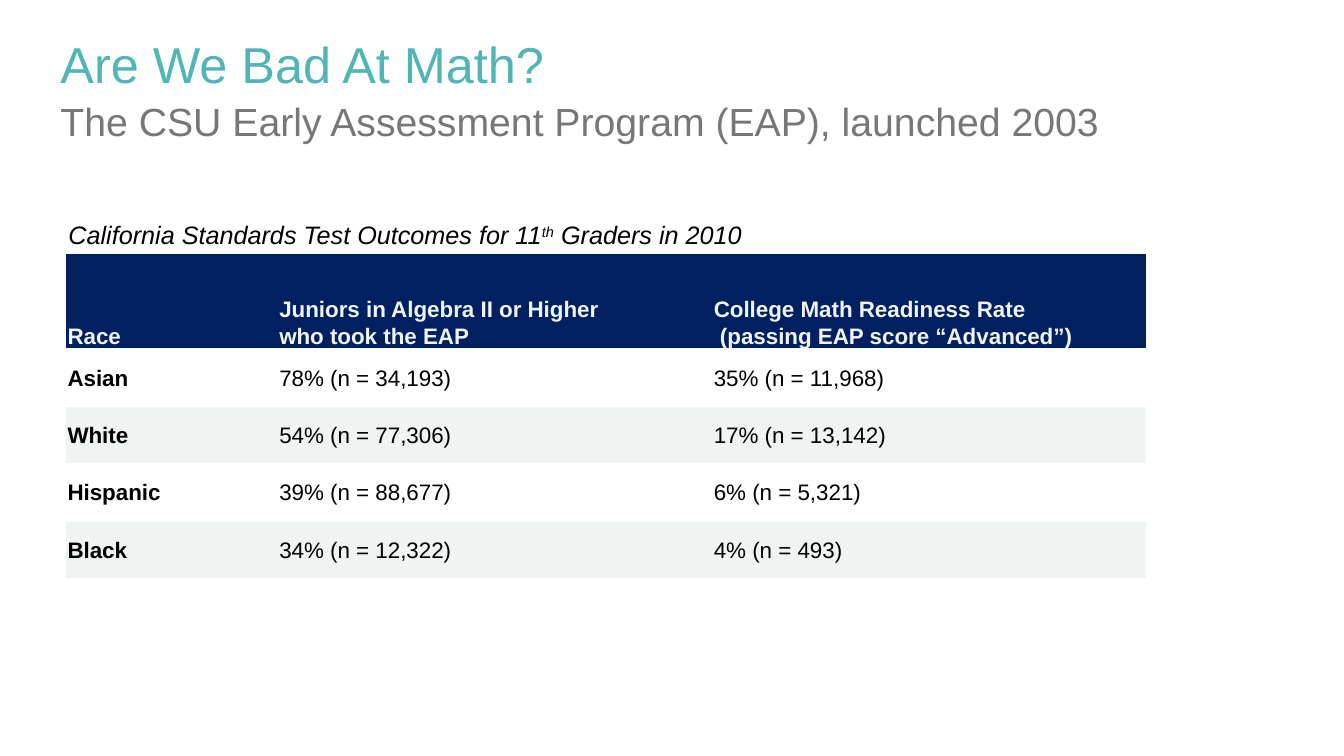
from lxml import etree
from pptx import Presentation
from pptx import util as u
from pptx.dml.color import RGBColor
from pptx.enum import text
from pptx.oxml import ns

COLORS = {
    "teal": "51B5B5",
    "gray": "777777",
    "navy": "002060",
    "pale": "EFF3F2",
    "white": "FFFFFF",
    "black": "000000",
}
LINE_SPACING = 1.07
COL_WIDTHS = [2.1, 4.31, 4.31]
ROW_HEIGHTS = [0.95] + [0.57] * 4
ROWS = [
    ["Race", "Juniors in Algebra II or Higher\nwho took the EAP",
     "College Math Readiness Rate\n (passing EAP score “Advanced”)"],
    ["Asian", "78% (n = 34,193)", "35% (n = 11,968)"],
    ["White", "54% (n = 77,306)", "17% (n = 13,142)"],
    ["Hispanic", "39% (n = 88,677)", "6% (n = 5,321)"],
    ["Black", "34% (n = 12,322)", "4% (n = 493)"],
]


def rgb(name):
    return RGBColor.from_string(COLORS[name])


def set_attrs(obj, values):
    for name, value in values.items():
        setattr(obj, name, value)


def add_run(p, words, size, color, **fmt):
    r = p.add_run()
    r.text = words
    set_attrs(r.font, {"name": "Arial", "size": u.Pt(size), **fmt})
    r.font.color.rgb = rgb(color)
    return r


def add_lines(tf, lines):
    for i, (words, size, color, fmt) in enumerate(lines):
        p = tf.add_paragraph() if i else tf.paragraphs[0]
        set_attrs(p, {"alignment": text.PP_ALIGN.LEFT, "line_spacing": LINE_SPACING})
        add_run(p, words, size, color, **fmt)


def place(sp, left, top, width, height):
    set_attrs(sp, {"left": u.Inches(left), "top": u.Inches(top),
                   "width": u.Inches(width), "height": u.Inches(height)})


def add_title(s):
    sp = s.shapes.title
    place(sp, 0, 0.24, 13.33, 1.22)
    tf = sp.text_frame
    set_attrs(tf, {"word_wrap": True, "auto_size": text.MSO_AUTO_SIZE.NONE,
                   "vertical_anchor": text.MSO_ANCHOR.TOP,
                   "margin_left": u.Inches(0.6)})
    add_lines(tf, [
        ("Are We Bad At Math?", 36, "teal", {}),
        ("The CSU Early Assessment Program (EAP), launched 2003", 28, "gray", {}),
    ])


def add_caption(s):
    sp = s.shapes.add_textbox(u.Inches(0.58), u.Inches(2.11), u.Inches(10.85), u.Inches(0.4))
    tf = sp.text_frame
    tf.word_wrap = True
    p = tf.paragraphs[0]
    p.line_spacing = LINE_SPACING
    add_run(p, "California Standards Test Outcomes for 11", 18, "black", italic=True)
    r = add_run(p, "th", 18, "black", italic=True)
    r.font._element.set("baseline", "30000")
    add_run(p, " Graders in 2010", 18, "black", italic=True)


def set_borders(cell, visible):
    tc_pr = cell._tc.get_or_add_tcPr()
    for i, side in enumerate("LRTB"):
        ln = etree.Element(ns.qn(f"a:ln{side}"), w=str(u.Pt(1)))
        if side in visible:
            fill = etree.SubElement(ln, ns.qn("a:solidFill"))
            etree.SubElement(fill, ns.qn("a:srgbClr"), val=COLORS["white"])
        else:
            etree.SubElement(ln, ns.qn("a:noFill"))
        tc_pr.insert(i, ln)


def fill_cell(cell, words, row, col):
    header = row == 0
    set_attrs(cell, {
        "margin_left": u.Inches(0.02), "margin_right": u.Inches(0.02),
        "margin_top": 0, "margin_bottom": 0,
        "vertical_anchor": text.MSO_ANCHOR.BOTTOM if header else text.MSO_ANCHOR.MIDDLE,
    })
    cell.fill.solid()
    cell.fill.fore_color.rgb = rgb("navy" if header else "white" if row % 2 else "pale")
    color = "pale" if header else "black"
    fmt = {"bold": header or col == 0}
    add_lines(cell.text_frame, [(line, 16, color, fmt) for line in words.split("\n")])
    set_borders(cell, "TB" + {0: "L", len(COL_WIDTHS) - 1: "R"}.get(col, ""))


def add_results(s):
    frame = s.shapes.add_table(
        len(ROWS), len(COL_WIDTHS), u.Inches(0.65), u.Inches(2.51),
        u.Inches(sum(COL_WIDTHS)), u.Inches(sum(ROW_HEIGHTS)))
    table = frame.table
    for column, width in zip(table.columns, COL_WIDTHS):
        column.width = u.Inches(width)
    for row, height in zip(table.rows, ROW_HEIGHTS):
        row.height = u.Inches(height)
    for i, values in enumerate(ROWS):
        for j, words in enumerate(values):
            fill_cell(table.cell(i, j), words, i, j)


def main():
    prs = Presentation()
    set_attrs(prs, {"slide_width": u.Inches(13.33), "slide_height": u.Inches(7.5)})
    s = prs.slides.add_slide(prs.slide_layouts[5])
    add_results(s)
    add_caption(s)
    add_title(s)
    prs.save("out.pptx")


if __name__ == "__main__":
    main()
